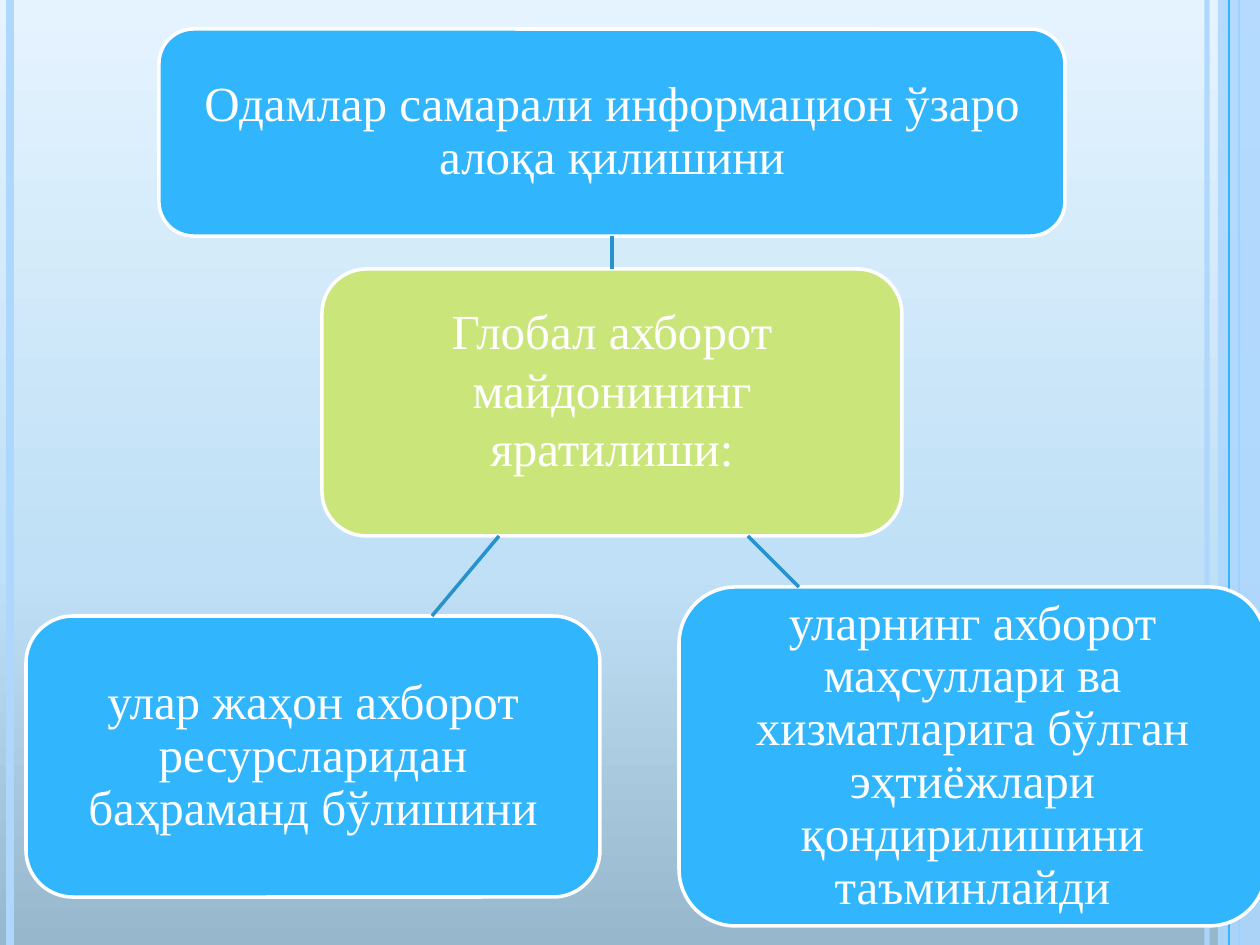
from dataclasses import dataclass

from lxml.etree import SubElement
from pptx import Presentation
from pptx.dml.color import RGBColor as RGB
from pptx.enum.shapes import MSO_CONNECTOR as CONN, MSO_SHAPE as SHAPE
from pptx.enum.text import MSO_ANCHOR as ANCHOR, PP_ALIGN as ALIGN
from pptx.oxml.ns import qn
from pptx.util import Emu, Pt

W, H = 1260, 945


def px(n):
    return Emu(round(n * 914400 / 126))


@dataclass(frozen=True)
class Theme:
    blue: str = "31B6FD"
    green: str = "CAE67B"
    pale: str = "AED7FE"
    link: str = "2792CB"
    white: str = "FFFFFF"
    sky: tuple = ((0, "97B7CC"), (40, "BFE0F6"), (100, "E5F3FE"))
    font: str = "Times New Roman"
    size: int = 28
    border: float = 2


class Deck:
    """Draws styled elements on the current slide."""

    def __init__(self, theme):
        self.t = theme
        self.prs = Presentation()
        self.prs.slide_width, self.prs.slide_height = px(W), px(H)
        self.s = self.prs.slides.add_slide(self.prs.slide_layouts[6])

    def apply(self, obj, **fmt):
        for name, value in fmt.items():
            setattr(obj, name, value)

    def alpha(self, el, percent):
        for clr in el.iter(qn("a:srgbClr")):
            SubElement(clr, qn("a:alpha"), val=str(percent * 1000))

    def background(self):
        fill = self.s.background.fill
        fill.gradient()
        fill.gradient_angle = 90
        stops = self.s.element.find(".//" + qn("a:gsLst"))
        for gs in list(stops):
            stops.remove(gs)
        for pos, color in self.t.sky:
            gs = SubElement(stops, qn("a:gs"), pos=str(pos * 1000))
            SubElement(gs, qn("a:srgbClr"), val=color)

    def line(self, x1, y1, x2, y2, color, width, alpha=100):
        cn = self.s.shapes.add_connector(CONN.STRAIGHT, px(x1), px(y1), px(x2), px(y2))
        cn.line.color.rgb = RGB.from_string(color)
        cn.line.width = Pt(width)
        if alpha < 100:
            self.alpha(cn.line._ln, alpha)
        SubElement(cn._element.spPr, qn("a:effectLst"))
        return cn

    def rail(self, x, color, width, alpha=100):
        self.line(x, 0, x, H, color, width, alpha)

    def shape(self, kind, x, y, w, h, color):
        sp = self.s.shapes.add_shape(kind, px(x), px(y), px(w), px(h))
        sp.shadow.inherit = False
        sp.fill.solid()
        sp.fill.fore_color.rgb = RGB.from_string(color)
        return sp

    def band(self, x, y, w, h, color, alpha):
        sp = self.shape(SHAPE.RECTANGLE, x, y, w, h, color)
        sp.line.fill.background()
        self.alpha(sp._element.spPr, alpha)

    def box(self, x, y, w, h, color, text, spacing=0.9, bottom=10):
        sp = self.shape(SHAPE.ROUNDED_RECTANGLE, x, y, w, h, color)
        white = RGB.from_string(self.t.white)
        sp.line.color.rgb = white
        sp.line.width = Pt(self.t.border)
        tf = sp.text_frame
        self.apply(tf, word_wrap=True, vertical_anchor=ANCHOR.MIDDLE, margin_left=px(10),
                   margin_right=px(10), margin_top=px(10), margin_bottom=px(bottom))
        p = tf.paragraphs[0]
        self.apply(p, alignment=ALIGN.CENTER, line_spacing=spacing)
        r = p.add_run()
        r.text = text
        self.apply(r.font, name=self.t.font, size=Pt(self.t.size))
        r.font.color.rgb = white
        return sp

    def link(self, x1, y1, x2, y2):
        return self.line(x1, y1, x2, y2, self.t.link, self.t.border)


def main():
    t = Theme()
    d = Deck(t)
    d.background()
    d.rail(1207, t.pale, 3, 93)
    d.rail(10, t.pale, 4.5)
    d.rail(1239, t.blue, 1.5)
    d.band(1218, 0, 42, H, t.pale, 87)
    d.rail(1229, t.blue, 0.75)

    center = d.box(322, 269, 580, 267, t.green,
                   "Глобал ахборот майдонининг яратилиши:", 1, 38)
    top = d.box(159, 29, 906, 207, t.blue,
                "Одамлар самарали информацион ўзаро алоқа қилишини")
    d.box(679, 587, 587, 339, t.blue,
          "уларнинг ахборот маҳсуллари ва хизматларига бўлган эҳтиёжлари "
          "қондирилишини таъминлайди")
    d.box(26, 616, 574, 281, t.blue,
          "улар жаҳон ахборот ресурсларидан баҳраманд бўлишини")

    stem = d.link(612, 236, 612, 269)
    stem.begin_connect(top, 2)
    stem.end_connect(center, 0)
    d.link(499, 536, 432, 616)
    d.link(748, 536, 799, 587)
    d.prs.save("out.pptx")


if __name__ == "__main__":
    main()
